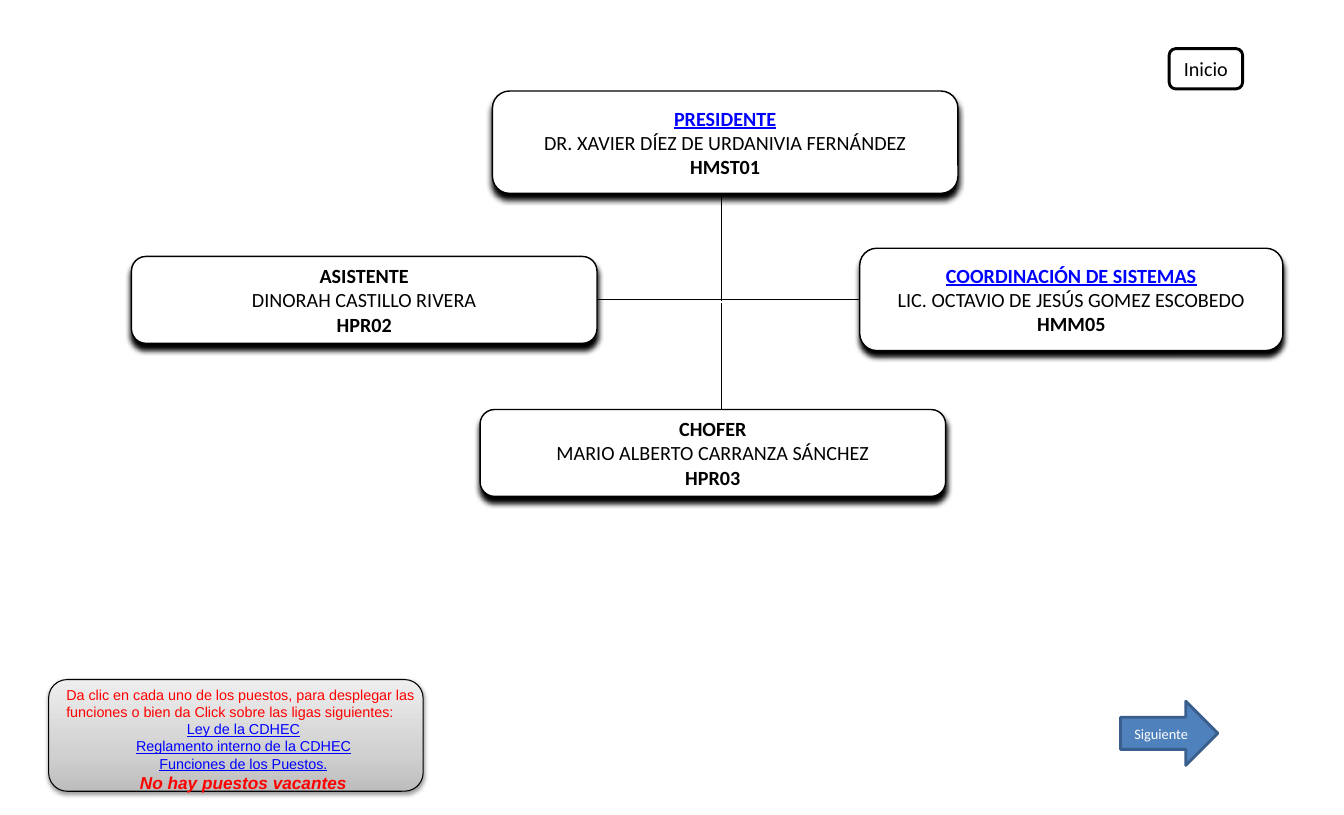
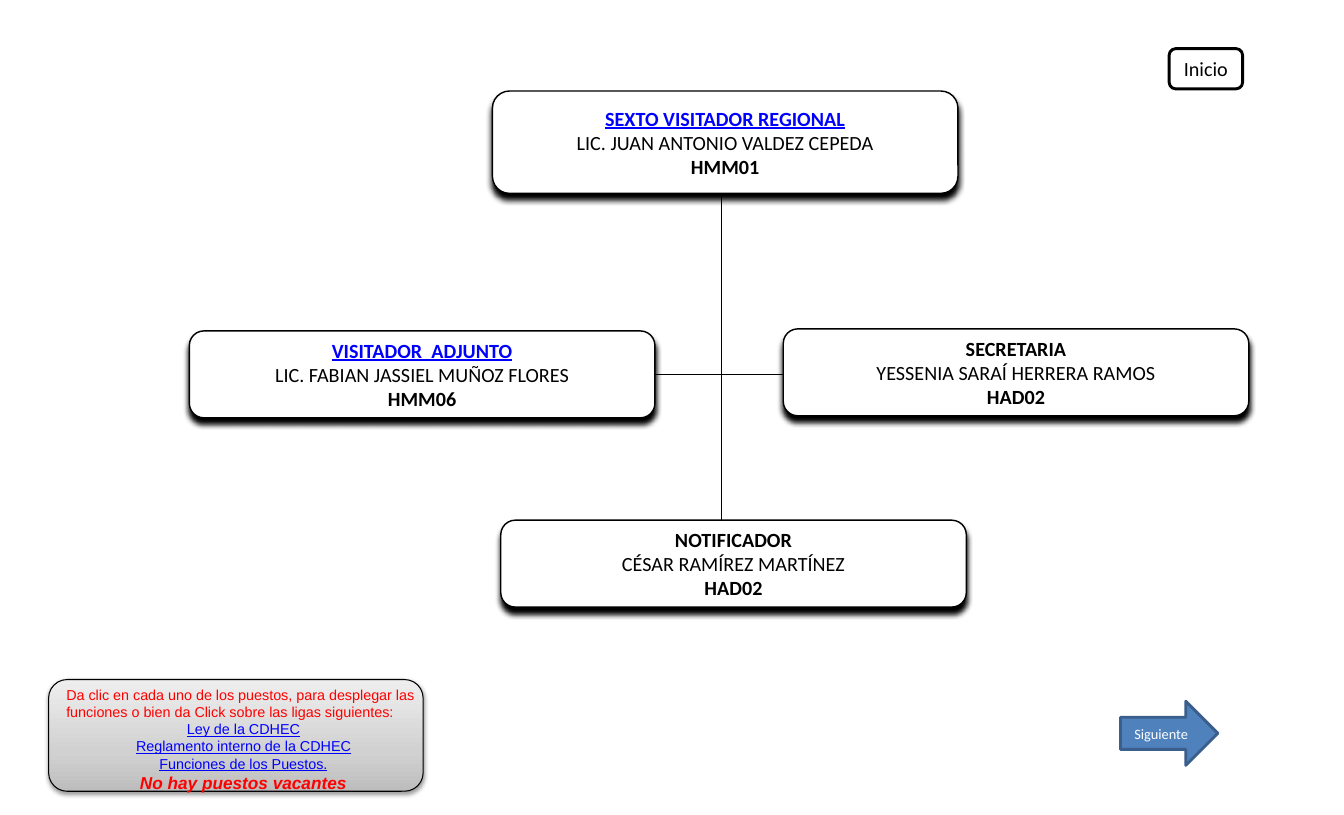
import dataclasses

import lxml.etree
import pptx
import pptx.dml.color
import pptx.enum.shapes
import pptx.enum.text
import pptx.oxml.ns
import pptx.util

SHAPES = pptx.enum.shapes.MSO_SHAPE
ALIGN = pptx.enum.text.PP_ALIGN
MIDDLE = pptx.enum.text.MSO_ANCHOR.MIDDLE
SLIDE_WIDTH, SLIDE_HEIGHT = pptx.util.Inches(12.99), pptx.util.Inches(7.88)
COLUMN, ROW = SLIDE_WIDTH / 100, SLIDE_HEIGHT / 100


@dataclasses.dataclass(frozen=True)
class Theme:
    ink: str = "000000"
    paper: str = "FFFFFF"
    link: str = "0000FF"
    notice: str = "FF0000"
    arrow: str = "4F81BD"
    arrow_edge: str = "3A5F8C"
    note_stops: tuple = ((0, "BDBDBD"), (35, "D1D1D1"), (100, "EEEEEE"))
    body_font: str = "Calibri"
    note_font: str = "Arial"
    post_size: int = 14
    small_size: int = 10
    vacancy_size: int = 12
    post_shadow: tuple = (100, 4, 4)
    note_shadow: tuple = (38, 3.1, 1.6)


THEME = Theme()


@dataclasses.dataclass(frozen=True)
class Box:
    left: float
    top: float
    width: float
    height: float

    @property
    def right(self):
        return self.left + self.width

    def area(self, left, top, width, height):
        return Box(self.left + left * self.width, self.top + top * self.height,
                   width * self.width, height * self.height)

    def lengths(self):
        return (round(self.left * COLUMN), round(self.top * ROW),
                round(self.width * COLUMN), round(self.height * ROW))


@dataclasses.dataclass(frozen=True)
class Post:
    box: Box
    role: str
    holder: str
    code: str
    linked: bool = False


POST_WIDTH, TALL, SHORT = 34.64, 12.56, 10.66
HEAD_BOX = Box(36.64, 11.17, POST_WIDTH, TALL)
TRUNK_COLUMN, TRUNK_TOP = 53.66, 23.98
HOME_BOX = Box(86.99, 5.96, 5.47, 4.95)
NOTE_BOX = Box(3.62, 83.38, 27.87, 13.71)
NEXT_BOX = Box(83.37, 86.04, 7.24, 7.87)

CHARTS = [
    {
        "head": Post(HEAD_BOX, "PRESIDENTE",
                     "DR. XAVIER DÍEZ DE URDANIVIA FERNÁNDEZ", "HMST01", True),
        "left": Post(Box(9.78, 31.47, POST_WIDTH, SHORT), "ASISTENTE",
                     "DINORAH CASTILLO RIVERA", "HPR02"),
        "right": Post(Box(63.97, 30.46, 31.49, TALL), "COORDINACIÓN DE SISTEMAS",
                      "LIC. OCTAVIO DE JESÚS GOMEZ ESCOBEDO", "HMM05", True),
        "below": Post(Box(35.72, 50.25, POST_WIDTH, SHORT), "CHOFER",
                      "MARIO ALBERTO CARRANZA SÁNCHEZ", "HPR03"),
        "branch_row": 36.8,
        "trunk": [(TRUNK_TOP, 36.93), (37.18, 50.25)],
    },
    {
        "head": Post(HEAD_BOX, "SEXTO VISITADOR REGIONAL",
                     "LIC. JUAN ANTONIO VALDEZ CEPEDA", "HMM01", True),
        "left": Post(Box(14.09, 40.61, POST_WIDTH, SHORT), "VISITADOR  ADJUNTO",
                     "LIC. FABIAN JASSIEL MUÑOZ FLORES", "HMM06", True),
        "right": Post(Box(58.28, 40.36, POST_WIDTH, SHORT), "SECRETARIA",
                      "YESSENIA SARAÍ HERRERA RAMOS", "HAD02"),
        "below": Post(Box(37.26, 63.83, POST_WIDTH, SHORT), "NOTIFICADOR",
                      "CÉSAR RAMÍREZ MARTÍNEZ", "HAD02"),
        "branch_row": 45.94,
        "trunk": [(TRUNK_TOP, 63.83)],
    },
]


def rgb(value):
    return pptx.dml.color.RGBColor.from_string(value)


def apply_format(target, values):
    for name, value in values.items():
        setattr(target, name, value)


def add_xml(parent, tag, **attributes):
    return lxml.etree.SubElement(
        parent, pptx.oxml.ns.qn(tag), {key: str(value) for key, value in attributes.items()})


def add_shadow(shape, opacity, blur, distance):
    effects = shape._element.spPr.find(pptx.oxml.ns.qn("a:effectLst"))
    shadow = add_xml(effects, "a:outerShdw", blurRad=int(pptx.util.Pt(blur)),
                     dist=int(pptx.util.Pt(distance)), dir=90 * 60000, rotWithShape=0)
    color = add_xml(shadow, "a:srgbClr", val=THEME.ink)
    add_xml(color, "a:alpha", val=opacity * 1000)


def add_gradient(shape, stops, angle):
    properties = shape._element.spPr
    gradient = add_xml(properties, "a:gradFill", rotWithShape=1)
    stop_list = add_xml(gradient, "a:gsLst")
    for share, color in stops:
        add_xml(add_xml(stop_list, "a:gs", pos=share * 1000), "a:srgbClr", val=color)
    add_xml(gradient, "a:lin", ang=angle * 60000, scaled=0)
    properties.insert(2, gradient)


def add_outline(slide, kind, box, fill, edge, weight):
    shape = slide.shapes.add_shape(kind, *box.lengths())
    shape.shadow.inherit = False
    shape.line.color.rgb = rgb(edge)
    shape.line.width = pptx.util.Pt(weight)
    if fill:
        shape.fill.solid()
        shape.fill.fore_color.rgb = rgb(fill)
    return shape


def write_lines(frame, lines, font, size, align=ALIGN.CENTER):
    for index, (text, color, changes) in enumerate(lines):
        paragraph = frame.add_paragraph() if index else frame.paragraphs[0]
        paragraph.alignment = changes.get("align", align)
        run = paragraph.add_run()
        run.text = text
        run.font.color.rgb = rgb(color)
        apply_format(run.font, {"name": font, "size": pptx.util.Pt(size), **changes.get("font", {})})


def add_post(slide, post):
    card = add_outline(slide, SHAPES.ROUNDED_RECTANGLE, post.box, THEME.paper, THEME.ink, 1)
    add_shadow(card, *THEME.post_shadow)
    side, edge = pptx.util.Inches(0.17), pptx.util.Inches(0.09)
    apply_format(card.text_frame, {
        "word_wrap": False, "vertical_anchor": MIDDLE, "margin_left": side,
        "margin_right": side, "margin_top": edge, "margin_bottom": edge})
    write_lines(card.text_frame, [
        (post.role, THEME.link if post.linked else THEME.ink,
         {"font": {"bold": True, "underline": post.linked}}),
        (post.holder, THEME.ink, {}),
        (post.code, THEME.ink, {"font": {"bold": True}}),
    ], THEME.body_font, THEME.post_size)


def add_link_line(slide, start, end):
    points = [round(place * unit) for point in (start, end)
              for place, unit in zip(point, (COLUMN, ROW))]
    line = slide.shapes.add_connector(pptx.enum.shapes.MSO_CONNECTOR.STRAIGHT, *points)
    line.line.color.rgb = rgb(THEME.ink)
    line.line.width = pptx.util.Pt(0.75)
    add_xml(line._element.spPr, "a:effectLst")


def add_button(slide, kind, box, label, fill, edge, ink, size):
    button = add_outline(slide, kind, box, fill, edge, 2)
    apply_format(button.text_frame, {"word_wrap": True, "vertical_anchor": MIDDLE})
    write_lines(button.text_frame, [(label, ink, {})], THEME.body_font, size)


def add_note(slide, box):
    panel = add_outline(slide, SHAPES.ROUNDED_RECTANGLE, box, None, THEME.ink, 0.75)
    add_gradient(panel, THEME.note_stops, 270)
    add_shadow(panel, *THEME.note_shadow)
    frame = slide.shapes.add_textbox(*box.area(0.02, 0.01, 1, 1.06).lengths()).text_frame
    apply_format(frame, {"word_wrap": True,
                         "auto_size": pptx.enum.text.MSO_AUTO_SIZE.SHAPE_TO_FIT_TEXT})
    links = ["Ley de la CDHEC", "Reglamento interno de la CDHEC", "Funciones de los Puestos."]
    write_lines(frame, [
        ("Da clic en cada uno de los puestos, para desplegar las funciones "
         "o bien da Click sobre las ligas siguientes:", THEME.notice, {"align": ALIGN.LEFT}),
        *[(link, THEME.link, {"font": {"underline": True}}) for link in links],
        ("No hay puestos vacantes", THEME.notice,
         {"font": {"size": pptx.util.Pt(THEME.vacancy_size), "bold": True, "italic": True}}),
    ], THEME.note_font, THEME.small_size)


def add_navigation(slide):
    add_button(slide, SHAPES.ROUNDED_RECTANGLE, HOME_BOX, "Inicio",
               THEME.paper, THEME.ink, THEME.ink, THEME.post_size)
    add_note(slide, NOTE_BOX)
    add_button(slide, SHAPES.RIGHT_ARROW, NEXT_BOX, "Siguiente",
               THEME.arrow, THEME.arrow_edge, THEME.paper, THEME.small_size)


def add_chart_slide(deck, chart):
    slide = deck.slides.add_slide(deck.slide_layouts.get_by_name("Blank"))
    add_post(slide, chart["head"])
    for top, bottom in chart["trunk"]:
        add_link_line(slide, (TRUNK_COLUMN, top), (TRUNK_COLUMN, bottom))
    row = chart["branch_row"]
    add_link_line(slide, (chart["left"].box.right, row), (chart["right"].box.left, row))
    for place in ("left", "below", "right"):
        add_post(slide, chart[place])
    add_navigation(slide)


def main():
    deck = pptx.Presentation()
    apply_format(deck, {"slide_width": SLIDE_WIDTH, "slide_height": SLIDE_HEIGHT})
    for chart in CHARTS:
        add_chart_slide(deck, chart)
    deck.save("out.pptx")


if __name__ == "__main__":
    main()
